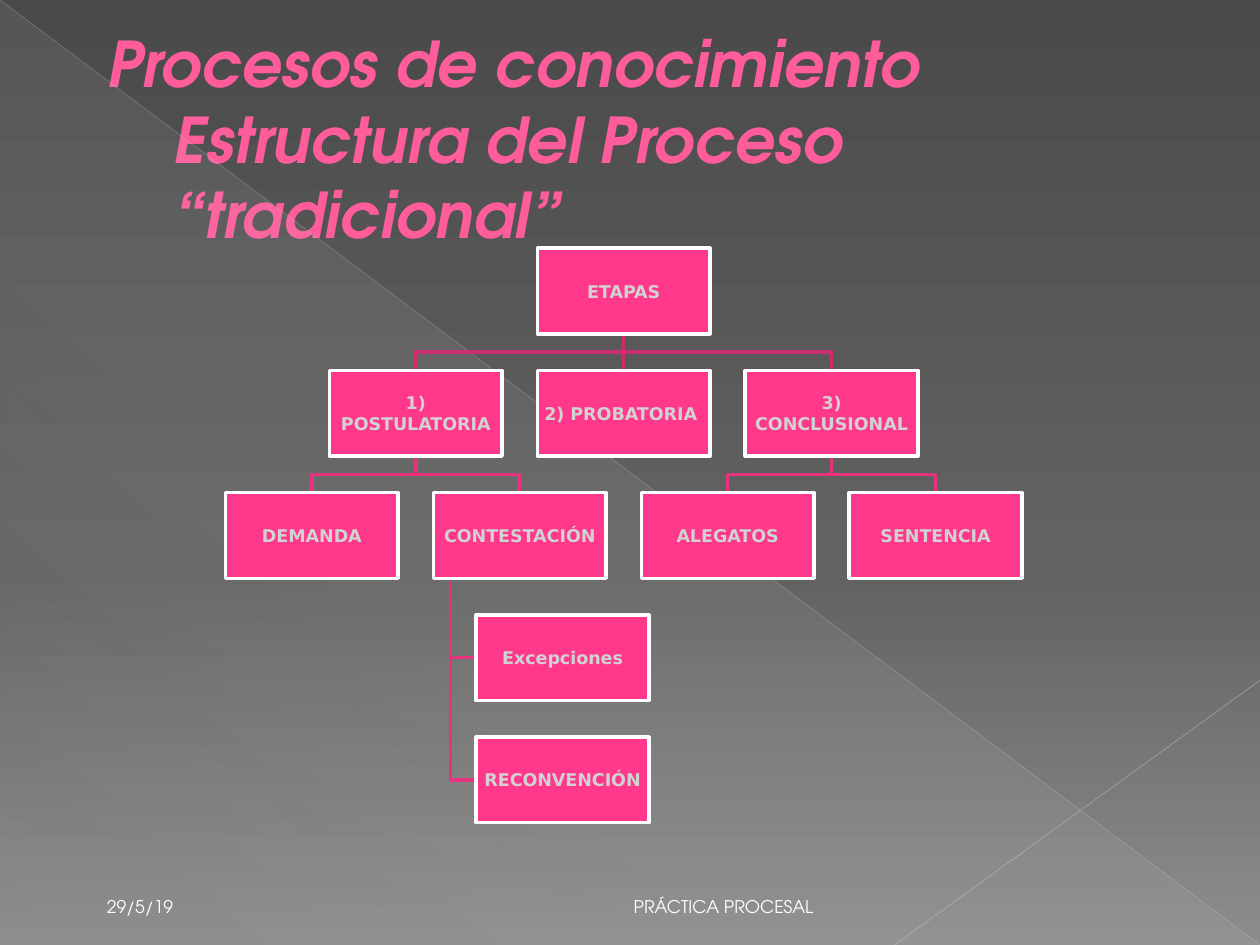
"""Build the slide on the stages of the traditional procedure."""
from typing import NamedTuple, Optional

import pptx
import pptx.dml.color
import pptx.enum.dml
import pptx.enum.shapes
import pptx.enum.text
import pptx.oxml
import pptx.oxml.ns
import pptx.util
from lxml import etree

RGBColor = pptx.dml.color.RGBColor
Inches = pptx.util.Inches
Pt = pptx.util.Pt
Align = pptx.enum.text.PP_ALIGN
Anchor = pptx.enum.text.MSO_ANCHOR
qn = pptx.oxml.ns.qn

WIDTH, HEIGHT = 10, 7.5
LEFT, TOP = 1.79, 1.97
COL, ROW = 1.65 / 2, 0.97
BOX_W, BOX_H = 1.37, 0.68
SIDE_COL = 2 + 0.34 / COL

WHITE = RGBColor(0xFF, 0xFF, 0xFF)
PINK = RGBColor(0xFF, 0x38, 0x8C)
TITLE_PINK = RGBColor(0xFF, 0x5C, 0x9C)
STAGE_LINK = RGBColor(0xCC, 0x2D, 0x70)
ACT_LINK = RGBColor(0xE7, 0x33, 0x7F)
PALE = RGBColor(0xD2, 0xD2, 0xD2)
DARK = RGBColor(0x4A, 0x4A, 0x4A)
MIDDLE = RGBColor(0x62, 0x62, 0x62)
LIGHT = RGBColor(0x8C, 0x8C, 0x8C)
LONG_RAY = RGBColor(0xBF, 0xBF, 0xBF)
SHORT_RAY = RGBColor(0xC6, 0xC6, 0xC6)

TITLE_FONT = "TeX Gyre Adventor"
BOX_FONT = "DejaVu Sans"


class Node(NamedTuple):
    """A box of the chart, placed by column and row."""
    text: str
    col: float
    row: int
    parent: Optional[str] = None

    @property
    def x(self) -> float:
        """Return the left edge in inches."""
        return LEFT + self.col * COL

    @property
    def y(self) -> float:
        """Return the top edge in inches."""
        return TOP + self.row * ROW


class Stop(NamedTuple):
    """A gradient stop, with position and opacity in percent."""
    pos: int
    color: RGBColor
    alpha: int = 100


class Ray(NamedTuple):
    """A thin background line, with ends as shares of the slide."""
    start: tuple
    end: tuple
    color: RGBColor
    width: float
    alpha: int


NODES = [
    Node("ETAPAS", 3, 0),
    Node("1) POSTULATORIA", 1, 1, "ETAPAS"),
    Node("2) PROBATORIA ", 3, 1, "ETAPAS"),
    Node("3) CONCLUSIONAL", 5, 1, "ETAPAS"),
    Node("DEMANDA", 0, 2, "1) POSTULATORIA"),
    Node("CONTESTACIÓN", 2, 2, "1) POSTULATORIA"),
    Node("ALEGATOS", 4, 2, "3) CONCLUSIONAL"),
    Node("SENTENCIA", 6, 2, "3) CONCLUSIONAL"),
    Node("Excepciones", SIDE_COL, 3, "CONTESTACIÓN"),
    Node("RECONVENCIÓN", SIDE_COL, 4, "CONTESTACIÓN"),
]
RAYS = [
    Ray((0, 0), (1, 1), LONG_RAY, 0.39, 35),
    Ray((1, 0.72), (0.71, 1), SHORT_RAY, 0.47, 45),
]


def add_alpha(color_el, alpha: int) -> None:
    """Give a colour element its opacity in percent."""
    etree.SubElement(color_el, qn("a:alpha")).set("val", str(alpha * 1000))


def set_gradient(fill, owner, stops: list, angle: int) -> None:
    """Fill with a linear gradient of any number of stops."""
    fill.gradient()
    grad = owner.xpath(".//a:gradFill")[0]
    grad.clear()
    gs_list = etree.SubElement(grad, qn("a:gsLst"))
    for stop in stops:
        gs = etree.SubElement(gs_list, qn("a:gs"), pos=str(stop.pos * 1000))
        clr = etree.SubElement(gs, qn("a:srgbClr"), val=str(stop.color))
        if stop.alpha < 100:
            add_alpha(clr, stop.alpha)
    etree.SubElement(grad, qn("a:lin"), ang=str(angle * 60000), scaled="0")


def add_line(s, start: tuple, end: tuple, color: RGBColor, width: float):
    """Add a straight connector between two points in inches."""
    line = s.shapes.add_connector(
        pptx.enum.shapes.MSO_CONNECTOR.STRAIGHT, *map(Inches, start + end))
    line.line.color.rgb = color
    line.line.width = Pt(width)
    etree.SubElement(line._element.spPr, qn("a:effectLst"))
    return line


def add_background(s) -> None:
    """Draw the grey gradient, the pale triangle and the two rays."""
    set_gradient(s.background.fill, s.element,
                 [Stop(0, DARK), Stop(60, MIDDLE), Stop(100, LIGHT)], 90)
    sp = s.shapes.add_shape(pptx.enum.shapes.MSO_SHAPE.RIGHT_TRIANGLE,
                            0, 0, Inches(WIDTH), Inches(HEIGHT))
    sp.shadow.inherit = False
    sp.line.fill.background()
    set_gradient(sp.fill, sp._element,
                 [Stop(0, PALE, 10), Stop(70, PALE, 8), Stop(100, PALE, 1)], 133)
    for ray in RAYS:
        start, end = ((x * WIDTH, y * HEIGHT) for x, y in (ray.start, ray.end))
        line = add_line(s, start, end, ray.color, ray.width)
        add_alpha(line._element.xpath(".//a:srgbClr")[0], ray.alpha)


def set_font(font, name: str, size: float, color: RGBColor, bold: bool) -> None:
    """Set the name, size, colour and weight of a font."""
    font.name, font.size, font.bold = name, Pt(size), bold
    font.color.rgb = color


def add_title(s) -> None:
    """Place and format the title."""
    title = s.shapes.title
    title.left, title.top = Inches(0.75), Inches(0.31)
    title.width, title.height = Inches(8.5), Inches(1.57)
    tf = title.text_frame
    tf.auto_size = pptx.enum.text.MSO_AUTO_SIZE.NONE
    tf.vertical_anchor = Anchor.MIDDLE
    p = tf.paragraphs[0]
    p.add_run().text = "Procesos de conocimiento"
    p.add_line_break()
    p.add_run().text = "Estructura del Proceso “tradicional”"
    p.alignment = Align.LEFT
    p._p.get_or_add_pPr().set("marL", str(Inches(0.53)))
    p._p.get_or_add_pPr().set("indent", str(-Inches(0.53)))
    set_font(p.font, TITLE_FONT, 36, TITLE_PINK, True)
    p.font.italic = True


def add_footer(s, text: str, left: float, width: float, align) -> None:
    """Add a small text at the foot of the slide."""
    tf = s.shapes.add_textbox(Inches(left), Inches(6.83),
                              Inches(width), Inches(0.5)).text_frame
    tf.word_wrap = True
    tf.vertical_anchor = Anchor.BOTTOM
    p = tf.paragraphs[0]
    p.text, p.alignment = text, align
    set_font(p.font, TITLE_FONT, 10, WHITE, False)


def add_link(s, parent: Node, child: Node):
    """Link a child to its parent and return the line if it is straight."""
    color = STAGE_LINK if child.row == 1 else ACT_LINK
    bottom, mid_x = parent.y + BOX_H, parent.x + BOX_W / 2
    child_mid = child.x + BOX_W / 2
    if child.col == parent.col:
        return add_line(s, (mid_x, bottom), (mid_x, child.y), color, 2)
    if child.col == SIDE_COL:
        spine, mid_y = parent.x + BOX_W / 10, child.y + BOX_H / 2
        points = [(spine, bottom), (spine, mid_y), (child.x, mid_y)]
    else:
        bend = (bottom + child.y) / 2
        points = [(mid_x, bottom), (mid_x, bend), (child_mid, bend), (child_mid, child.y)]
    start, *rest = [(Inches(x), Inches(y)) for x, y in points]
    builder = s.shapes.build_freeform(*start)
    builder.add_line_segments(rest, close=False)
    sp = builder.convert_to_shape()
    sp.shadow.inherit = False
    sp.fill.background()
    sp.line.color.rgb, sp.line.width = color, Pt(2)
    return None


def add_box(s, node: Node):
    """Add the labelled box of a node."""
    sp = s.shapes.add_shape(pptx.enum.shapes.MSO_SHAPE.RECTANGLE,
                            *map(Inches, (node.x, node.y, BOX_W, BOX_H)))
    sp.shadow.inherit = False
    sp.fill.solid()
    sp.fill.fore_color.rgb = PINK
    sp.line.color.rgb, sp.line.width = WHITE, Pt(2)
    tf = sp.text_frame
    tf.word_wrap, tf.vertical_anchor = True, Anchor.MIDDLE
    tf.margin_left = tf.margin_right = tf.margin_top = tf.margin_bottom = Inches(0.01)
    p = tf.paragraphs[0]
    p.text, p.alignment = node.text, Align.CENTER
    set_font(p.font, BOX_FONT, 10, PALE, True)
    return sp


def add_chart_of_stages(s) -> None:
    """Draw the links, then the boxes, and join the straight links."""
    by_text = {node.text: node for node in NODES}
    links = [(node, add_link(s, by_text[node.parent], node))
             for node in NODES if node.parent]
    boxes = {node.text: add_box(s, node) for node in NODES}
    for node, line in links:
        if line is not None:
            line.begin_connect(boxes[node.parent], 2)
            line.end_connect(boxes[node.text], 0)


def main() -> None:
    """Build and save the presentation."""
    prs = pptx.Presentation()
    prs.slide_width, prs.slide_height = Inches(WIDTH), Inches(HEIGHT)
    s = prs.slides.add_slide(prs.slide_layouts[5])
    add_background(s)
    add_footer(s, "29/5/19", 0.75, 2.08, Align.LEFT)
    add_footer(s, "PRÁCTICA PROCESAL ", 3.42, 3.17, Align.RIGHT)
    add_title(s)
    add_chart_of_stages(s)
    prs.save("out.pptx")


if __name__ == "__main__":
    main()
